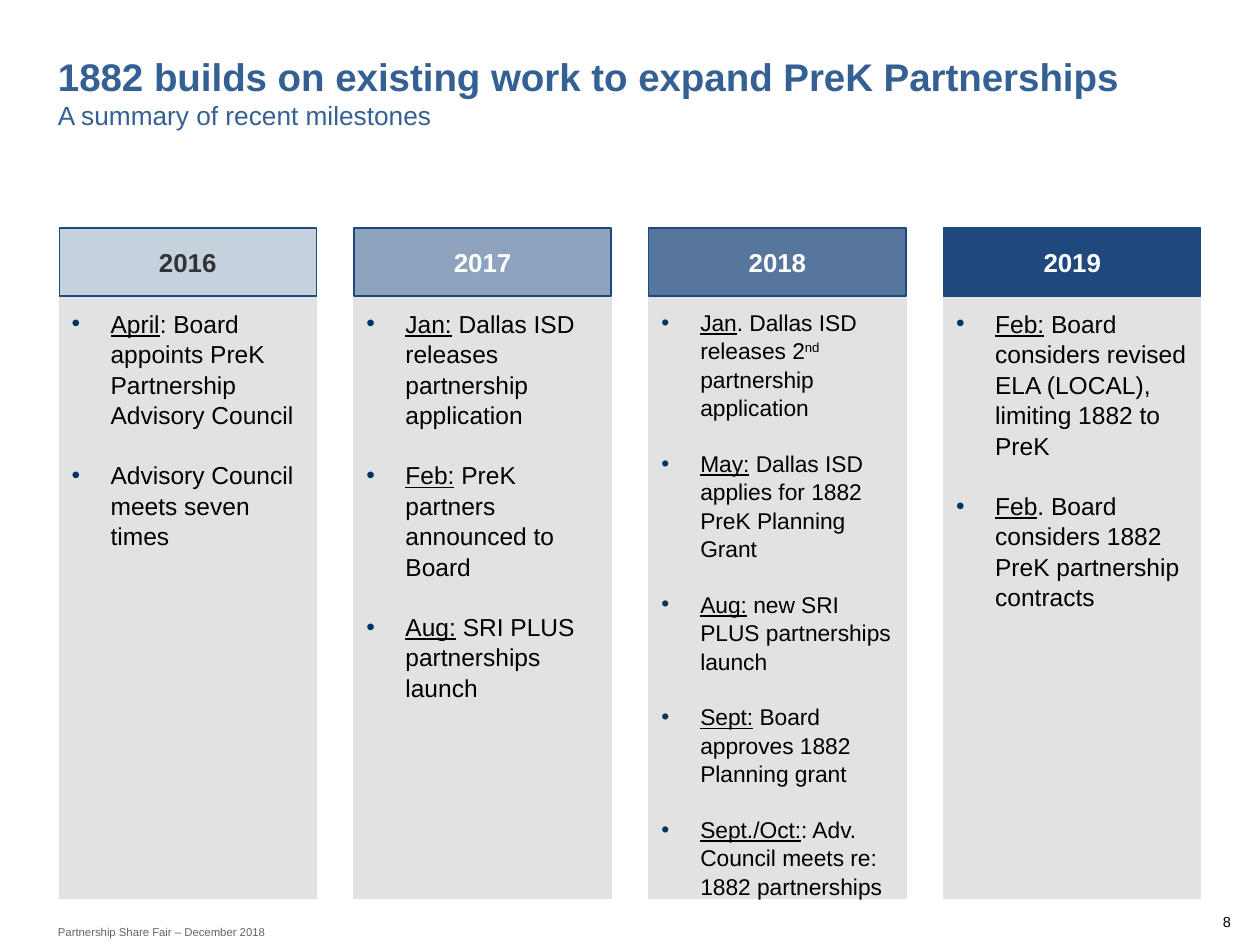
from lxml.etree import SubElement
from pptx import Presentation
from pptx.dml.color import RGBColor
from pptx.enum.shapes import MSO_SHAPE as SHAPE
from pptx.enum.text import MSO_ANCHOR as ANCHOR, PP_ALIGN as ALIGN
from pptx.oxml.ns import qn
from pptx.util import Emu, Pt

PX = 9144  # EMU per px, 100 px to the inch
FONT = "Arial"
COLORS = {
    "title": "346094", "navy": "1F497D", "panel": "E2E2E2", "bullet": "003561",
    "dark": "323335", "white": "FFFFFF", "black": "000000", "footer": "646569",
}

# Year, header opacity in percent, header text colour, body size, milestones.
# A milestone is an underlined date and its text; ^ encloses a superscript.
MILESTONES = [
    ("2016", 25, "dark", 14, [
        ("April", ": Board appoints PreK Partnership Advisory Council"),
        ("", "Advisory Council meets seven times"),
    ]),
    ("2017", 50, "white", 14, [
        ("Jan:", " Dallas ISD releases partnership application"),
        ("Feb:", " PreK partners announced to Board"),
        ("Aug:", " SRI PLUS partnerships launch"),
    ]),
    ("2018", 75, "white", 13, [
        ("Jan", ". Dallas ISD releases 2^nd^ partnership application"),
        ("May:", " Dallas ISD applies for 1882 PreK Planning Grant"),
        ("Aug:", " new SRI PLUS partnerships launch"),
        ("Sept:", " Board approves 1882 Planning grant"),
        ("Sept./Oct:", ": Adv. Council meets re: 1882 partnerships"),
    ]),
    ("2019", 100, "white", 14, [
        ("Feb:", " Board considers revised ELA (LOCAL), limiting 1882 to PreK"),
        ("Feb", ". Board considers 1882 PreK partnership contracts"),
    ]),
]


def px(n):
    return Emu(n * PX)


def rgb(name):
    return RGBColor.from_string(COLORS[name])


def style(font, size, color, bold=False):
    font.name, font.size, font.bold = FONT, Pt(size), bold
    font.color.rgb = rgb(color)


def set_frame(tf, anchor, side, end, wrap=True):
    tf.word_wrap = wrap
    tf.vertical_anchor = anchor
    tf.margin_left = tf.margin_right = px(side)
    tf.margin_top = tf.margin_bottom = px(end)


def add_label(s, box, lines, anchor, end=0, wrap=True, align=ALIGN.LEFT):
    """Text box with one (text, size, color, bold) per line."""
    tf = s.shapes.add_textbox(*map(px, box)).text_frame
    set_frame(tf, anchor, 0, end, wrap)
    tf.text = "\n".join(line[0] for line in lines)
    for p, (_, size, color, bold) in zip(tf.paragraphs, lines):
        p.alignment = align
        style(p.runs[0].font, size, color, bold)


def add_panel(s, box, fill, line, anchor):
    sp = s.shapes.add_shape(SHAPE.RECTANGLE, *map(px, box))
    sp.shadow.inherit = False
    sp.fill.solid()
    sp.fill.fore_color.rgb = rgb(fill)
    sp.line.color.rgb = rgb(line)
    sp.line.width = Pt(0.75)
    set_frame(sp.text_frame, anchor, 10, 9)
    return sp


def add_bullet(p):
    pPr = p._p.get_or_add_pPr()
    pPr.set("marL", str(px(31)))
    pPr.set("indent", str(px(-31)))
    clr = SubElement(pPr, qn("a:buClr"))
    SubElement(clr, qn("a:srgbClr"), val=COLORS["bullet"])
    SubElement(pPr, qn("a:buFont"), typeface=FONT)
    SubElement(pPr, qn("a:buChar"), char="•")


def add_milestone(p, date, text, size):
    add_bullet(p)
    p.alignment = ALIGN.LEFT
    p.line_spacing = 1.04
    if date:
        r = p.add_run()
        r.text = date
        style(r.font, size, "black")
        r.font.underline = True
    for i, part in enumerate(text.split("^")):
        r = p.add_run()
        r.text = part
        style(r.font, size, "black")
        if i % 2:
            r.font._element.set("baseline", "30000")


def add_year(s, box, year, opacity, color, size, items):
    """Column with a tinted year header above a panel of milestones."""
    x, y, w, h = box
    head_h = 54

    # Milestones
    body = add_panel(s, (x, y + head_h, w, h - head_h), "panel", "panel", ANCHOR.TOP)
    tf = body.text_frame
    for i, (date, text) in enumerate(items):
        p = tf.add_paragraph() if i else tf.paragraphs[0]
        add_milestone(p, date, text, size)
        if i:
            p.space_before = Pt(size * 1.2)

    # Year header
    head = add_panel(s, (x, y, w, head_h), "navy", "navy", ANCHOR.MIDDLE)
    if opacity < 100:
        clr = head.fill._xPr.find(qn("a:solidFill")).find(qn("a:srgbClr"))
        SubElement(clr, qn("a:alpha"), val=str(opacity * 1000))
    p = head.text_frame.paragraphs[0]
    p.text = year
    p.alignment = ALIGN.CENTER
    style(p.runs[0].font, 14.8, color, bold=True)


def add_timeline(s, box):
    x, y, w, h = box
    gap, n = 30, len(MILESTONES)
    col_w = (w - gap * (n - 1)) // n
    for i, column in enumerate(MILESTONES):
        add_year(s, (x + i * (col_w + gap), y, col_w, h), *column)


def add_title(s, box):
    add_label(s, box, [
        ("1882 builds on existing work to expand PreK Partnerships", 22, "title", True),
        ("A summary of recent milestones", 15, "title", False),
    ], ANCHOR.BOTTOM, end=5)


def add_footer(s, box):
    x, y, w, h = box
    add_label(s, (x, y + 8, 192, 13),
              [("Partnership Share Fair – December 2018", 6.5, "footer", False)],
              ANCHOR.MIDDLE, wrap=False)
    add_label(s, (x + w - 19, y, 19, 14), [("8", 8.3, "black", False)],
              ANCHOR.TOP, wrap=False, align=ALIGN.RIGHT)


def main():
    prs = Presentation()
    prs.slide_width, prs.slide_height = px(1000), px(750)
    s = prs.slides.add_slide(prs.slide_layouts[6])
    add_title(s, (46, 18, 908, 91))
    add_timeline(s, (47, 181, 906, 532))
    add_footer(s, (46, 725, 931, 21))
    prs.save("out.pptx")


if __name__ == "__main__":
    main()
